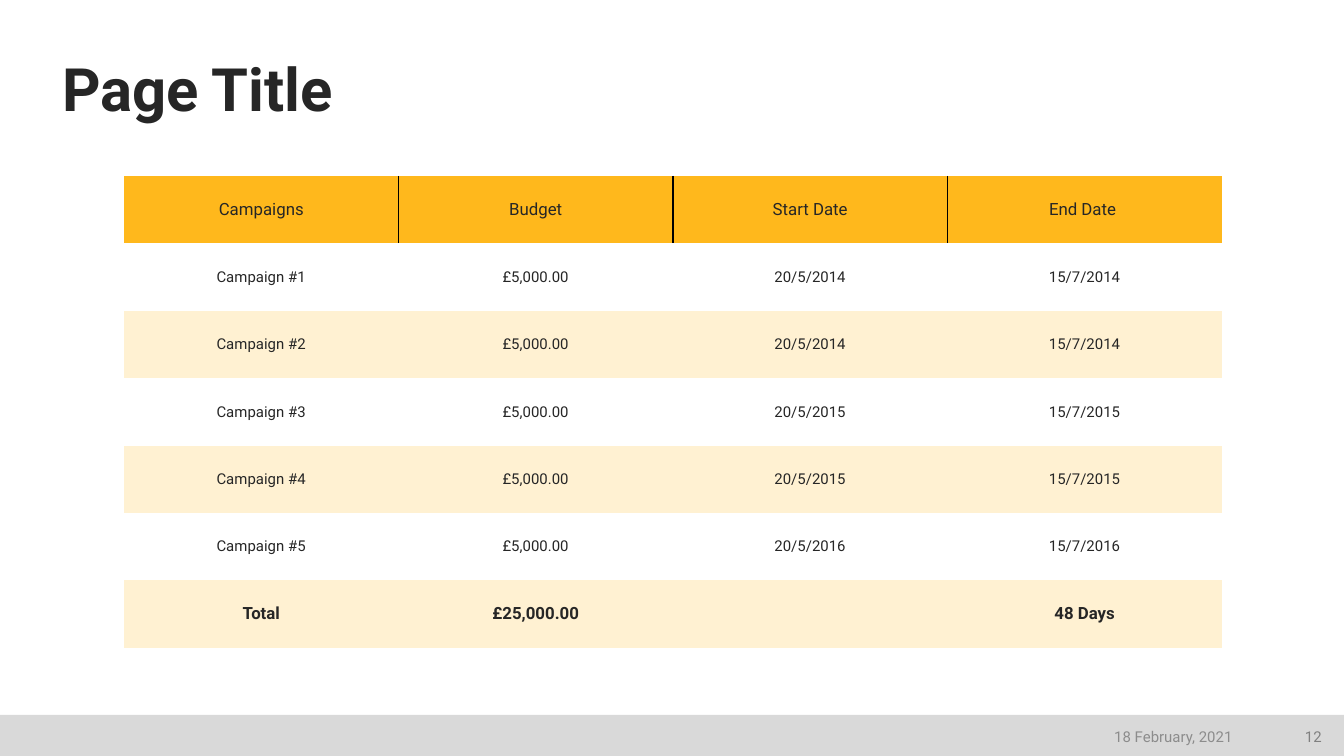
"""Build a slide with a campaign budget table and a dated footer."""
from lxml.etree import fromstring
from pptx import Presentation
from pptx.dml.color import RGBColor
from pptx.enum.shapes import MSO_SHAPE
from pptx.enum.text import MSO_ANCHOR, MSO_AUTO_SIZE, PP_ALIGN
from pptx.oxml.ns import nsdecls
from pptx.util import Emu, Pt

INK = RGBColor(0x26, 0x26, 0x26)
AMBER = RGBColor(0xFF, 0xB8, 0x1C)
CREAM = RGBColor(0xFF, 0xF1, 0xD2)
WHITE = RGBColor(0xFF, 0xFF, 0xFF)
FOOTER_GREY = RGBColor(0xD9, 0xD9, 0xD9)
NUMBER_GREY = RGBColor(0x80, 0x80, 0x80)
DATE_GREY = RGBColor(0x8C, 0x8C, 0x8C)
NO_STYLE = "{2D5ABB26-0587-4C30-8999-92F81FD0307C}"
ROWS = [
    ("Campaigns", "Budget", "Start Date", "End Date "),
    ("Campaign #1", "£5,000.00", "20/5/2014", "15/7/2014"),
    ("Campaign #2", "£5,000.00", "20/5/2014", "15/7/2014"),
    ("Campaign #3", "£5,000.00", "20/5/2015", "15/7/2015"),
    ("Campaign #4", "£5,000.00", "20/5/2015", "15/7/2015"),
    ("Campaign #5", "£5,000.00", "20/5/2016", "15/7/2016"),
    ("Total", "£25,000.00", "", "48 Days"),
]


def px(*lengths):
    return [Emu(round(length * 914400 / 134.4)) for length in lengths]


def style(paragraph, size, color, align, bold=False):
    paragraph.alignment = align
    paragraph.font.name = "Roboto"
    paragraph.font.size = Pt(size)
    paragraph.font.bold = bold
    paragraph.font.color.rgb = color


deck = Presentation()
deck.slide_width, deck.slide_height = px(1344, 756)
slide = deck.slides.add_slide(deck.slide_layouts[5])

title = slide.shapes.title
title.left, title.top, title.width, title.height = px(62, 54, 1223, 70)
heading = title.text_frame
heading.text = "Page Title"
heading.auto_size = MSO_AUTO_SIZE.NONE
heading.vertical_anchor = MSO_ANCHOR.BOTTOM
heading.margin_left = heading.margin_right = heading.margin_top = heading.margin_bottom = 0
heading.paragraphs[0].line_spacing = 0.9
style(heading.paragraphs[0], 32, INK, PP_ALIGN.LEFT, bold=True)

footer = slide.shapes.add_shape(MSO_SHAPE.RECTANGLE, *px(0, 715, 1344, 41))
footer.shadow.inherit = False
footer.fill.solid()
footer.fill.fore_color.rgb = FOOTER_GREY
footer.line.fill.background()

campaigns = slide.shapes.add_table(len(ROWS), 4, *px(124, 176, 1098, 472)).table
campaigns._tbl.tblPr.find("{*}tableStyleId").text = NO_STYLE
last = len(ROWS) - 1
for row, values in enumerate(ROWS):
    emphasised = row in (0, last)
    for column, value in enumerate(values):
        cell = campaigns.cell(row, column)
        cell.text = value
        cell.vertical_anchor = MSO_ANCHOR.MIDDLE
        cell.margin_left, cell.margin_right, cell.margin_top, cell.margin_bottom = px(3, 3, 3, 3)
        cell.fill.solid()
        cell.fill.fore_color.rgb = AMBER if row == 0 else WHITE if row % 2 else CREAM
        style(cell.text_frame.paragraphs[0], 9 if emphasised else 8, INK,
              PP_ALIGN.CENTER, bold=row == last)
        if row == 0:
            sides = [side for side, inner in (("lnL", column > 0), ("lnR", column < 3)) if inner]
            for position, side in enumerate(sides):
                cell._tc.get_or_add_tcPr().insert(position, fromstring(
                    f'<a:{side} {nsdecls("a")} w="12700"><a:solidFill>'
                    f'<a:srgbClr val="000000"/></a:solidFill></a:{side}>'))

for text, left, width, color in (
    ("12", 1285, 50, NUMBER_GREY),
    ("18 February, 2021", 943, 303, DATE_GREY),
):
    note = slide.shapes.add_textbox(*px(left, 719, width, 35)).text_frame
    note.word_wrap = True
    note.vertical_anchor = MSO_ANCHOR.MIDDLE
    note.text = text
    style(note.paragraphs[0], 8, color, PP_ALIGN.RIGHT)

deck.save("out.pptx")
